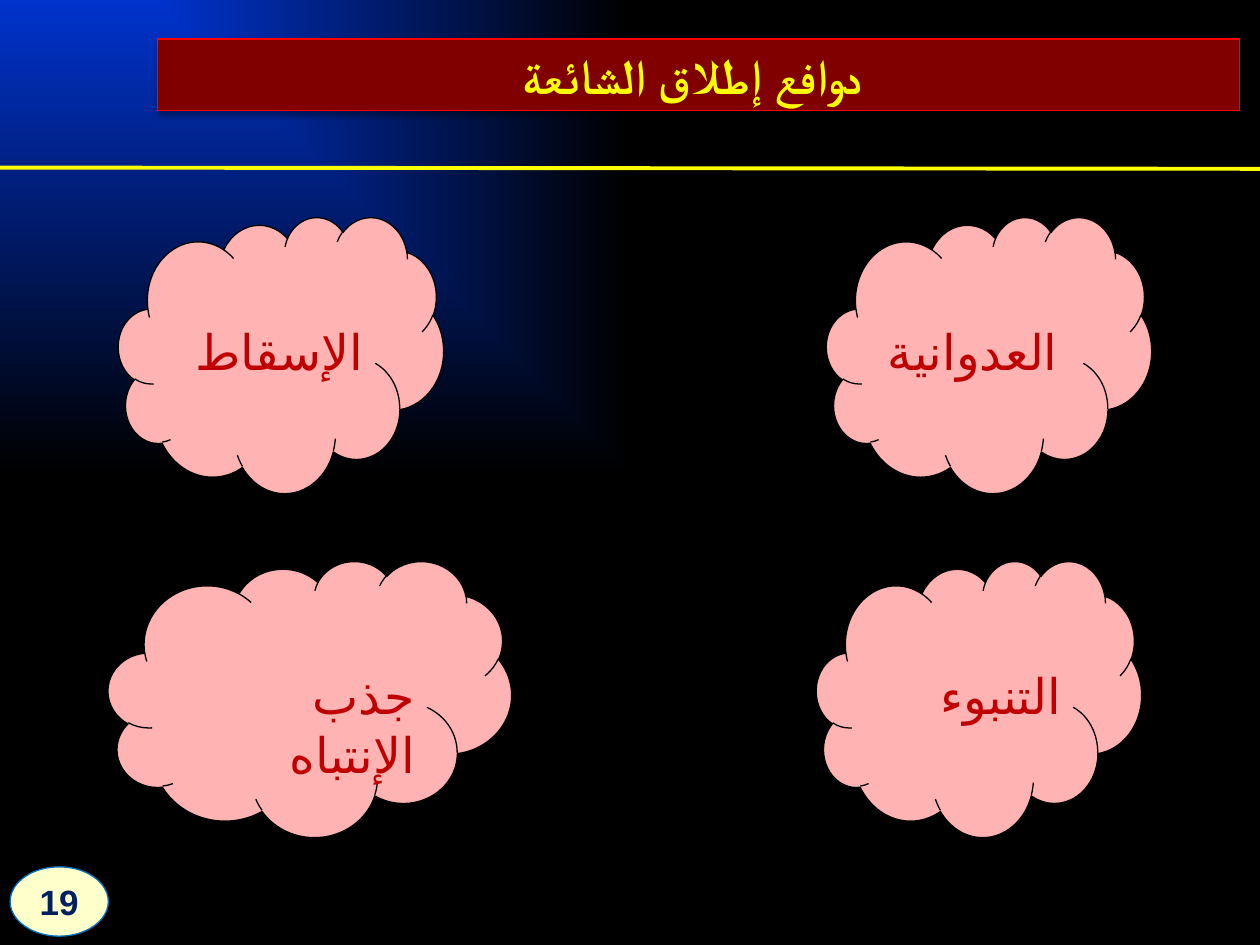
from lxml.etree import SubElement
from pptx import Presentation
from pptx.dml.color import RGBColor
from pptx.enum.lang import MSO_LANGUAGE_ID
from pptx.enum.shapes import MSO_CONNECTOR, MSO_SHAPE
from pptx.enum.text import MSO_ANCHOR, PP_ALIGN
from pptx.oxml import parse_xml
from pptx.oxml.ns import nsdecls, qn
from pptx.util import Inches, Pt

WIDTH, HEIGHT = 10, 7.5
TITLE = "دوافع إطلاق الشائعة "
PAGE_NUMBER = "19"
CLOUD_HEIGHT = 2.19
ROW_TOPS = (1.72, 4.45)
# text, left, row, width
MOTIVES = [
    ("العدوانية ", 6.56, 0, 2.58),
    ("الإسقاط", 0.94, 0, 2.58),
    ("التنبوء", 6.48, 1, 2.58),
    ("جذب الإنتباه", 0.86, 1, 3.2),
]


def color(value):
    return RGBColor.from_string(value)


def set_background(slide):
    """Blue glow in the top left corner, fading to black."""
    slide.background.fill.solid()
    properties = slide.background.fill._xPr
    properties.replace(properties.find(qn("a:solidFill")), parse_xml(
        f'<a:gradFill {nsdecls("a")} rotWithShape="0"><a:gsLst>'
        '<a:gs pos="0"><a:srgbClr val="0033CC"/></a:gs>'
        '<a:gs pos="100000"><a:srgbClr val="000000"/></a:gs></a:gsLst>'
        '<a:path path="rect"><a:fillToRect r="100000" b="100000"/></a:path>'
        '</a:gradFill>'))


def add_label(slide, kind, box, fill, line, text, font, size, text_color,
              bold=False, align=PP_ALIGN.CENTER):
    shape = slide.shapes.add_shape(kind, *map(Inches, box))
    shape.shadow.inherit = False
    shape.fill.solid()
    shape.fill.fore_color.rgb = color(fill)
    shape.line.color.rgb = color(line)
    shape.line.width = Pt(0.75)
    shape.text_frame.word_wrap = True
    paragraph = shape.text_frame.paragraphs[0]
    paragraph.text = text
    paragraph.alignment = align
    paragraph.font.name = font
    paragraph.font.size = Pt(size)
    paragraph.font.bold = bold
    paragraph.font.color.rgb = color(text_color)
    return shape


def set_arabic(shape, font):
    """Give the Arabic letters their own font and language."""
    for run in shape.text_frame.paragraphs[0].runs:
        run.font.language_id = MSO_LANGUAGE_ID.ARABIC
        SubElement(run.font._rPr, qn("a:cs"), typeface=font)


def add_soft_shadow(shape):
    effects = shape._element.spPr.find(qn("a:effectLst"))
    effects.append(parse_xml(
        f'<a:outerShdw {nsdecls("a")} blurRad="40000" dist="23000" '
        'dir="5400000" rotWithShape="0"><a:srgbClr val="000000">'
        '<a:alpha val="35000"/></a:srgbClr></a:outerShdw>'))


presentation = Presentation()
presentation.slide_width = Inches(WIDTH)
presentation.slide_height = Inches(HEIGHT)
slide = presentation.slides.add_slide(presentation.slide_layouts[6])
set_background(slide)

rule = slide.shapes.add_connector(
    MSO_CONNECTOR.STRAIGHT, Inches(WIDTH), Inches(1.34), 0, Inches(1.33))
rule.line.color.rgb = color("FFFF00")
rule.line.width = Pt(2.25)
SubElement(rule._element.spPr, qn("a:effectLst"))

title = add_label(slide, MSO_SHAPE.RECTANGLE, (1.25, 0.31, 8.59, 0.57),
                  "800000", "FF0000", TITLE, "Times New Roman", 28, "FFFF00",
                  bold=True)
set_arabic(title, "Times New Roman")
add_soft_shadow(title)

add_label(slide, MSO_SHAPE.OVAL, (0.08, 6.88, 0.78, 0.55), "FFFFCC", "0070C0",
          PAGE_NUMBER, "Arial", 20, "002060", bold=True)

for text, left, row, width in MOTIVES:
    cloud = add_label(slide, MSO_SHAPE.CLOUD,
                      (left, ROW_TOPS[row], width, CLOUD_HEIGHT),
                      "FFB3B3", "000000", text, "Arial", 28, "C00000",
                      align=PP_ALIGN.RIGHT)
    set_arabic(cloud, "Arial")
    cloud.text_frame.vertical_anchor = MSO_ANCHOR.TOP
    cloud.text_frame.margin_top = Inches(0.5)

presentation.save("out.pptx")
